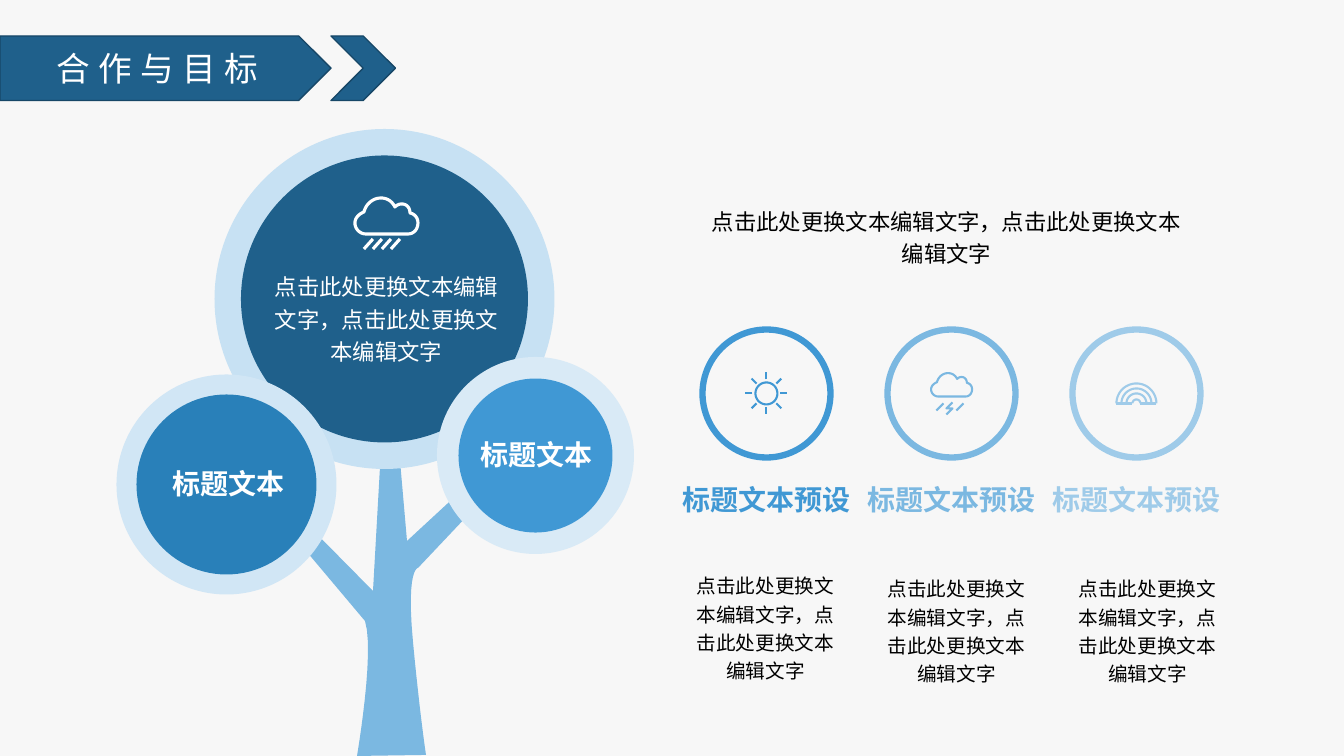
import math

from lxml import etree
from pptx import Presentation
from pptx import util as u
from pptx.dml.color import RGBColor
from pptx.enum import shapes, text
from pptx.oxml import ns

PX = 914400 / 100.8
FONT = "Noto Sans CJK SC"

WHITE = RGBColor(0xFF, 0xFF, 0xFF)
BLACK = RGBColor(0x00, 0x00, 0x00)
BACKGROUND = RGBColor(0xF7, 0xF7, 0xF7)
NAVY = RGBColor(0x1F, 0x60, 0x8B)
NAVY_EDGE = RGBColor(0x17, 0x47, 0x67)
BLUE = RGBColor(0x29, 0x80, 0xB9)
BRIGHT = RGBColor(0x40, 0x98, 0xD4)
SKY = RGBColor(0x7B, 0xB8, 0xE1)
PALE = RGBColor(0x9F, 0xCB, 0xE9)
HALO_TOP = RGBColor(0xC7, 0xE1, 0xF3)
HALO_RIGHT = RGBColor(0xD9, 0xEA, 0xF6)
HALO_LEFT = RGBColor(0xD1, 0xE6, 0xF5)

BODY = "点击此处更换文本编辑文字，点击此处更换文本编辑文字"

# Outlines: a pair is a straight step, six numbers are a cubic curve.
TREE = [(357, 756), (357, 756, 375, 651, 365, 621), (285, 526), (298, 515),
        (373, 591), (381, 449), (399, 449), (407, 541), (473, 480), (486, 496),
        (418, 568), (418, 568, 406, 568, 413, 642), (420, 716, 426, 755, 426, 755)]
CLOUD = [(54, 37), (60, 37, 64, 32, 64, 26), (64, 21, 61, 17, 56, 16),
         (56, 10, 52, 7, 48, 7), (45, 7, 43, 8, 41, 10), (38, 4, 33, 1, 27, 1),
         (19, 1, 12, 7, 10, 15), (5, 17, 1, 21, 1, 26), (1, 32, 6, 37, 12, 37)]


def px(length):
    return u.Emu(round(length * PX))


def paint(shape, fill=None, line=None, width=1):
    shape.shadow.inherit = False
    if fill is None:
        shape.fill.background()
    else:
        shape.fill.solid()
        shape.fill.fore_color.rgb = fill
    if line is None:
        shape.line.fill.background()
    else:
        shape.line.color.rgb = line
        shape.line.width = u.Pt(width)


def format_text(shape, size, colour, bold=False, spacing=None):
    """Centre the text of a shape and style its runs."""
    frame = shape.text_frame
    frame.auto_size = text.MSO_AUTO_SIZE.NONE
    frame.vertical_anchor = text.MSO_ANCHOR.MIDDLE
    for paragraph in frame.paragraphs:
        paragraph.alignment = text.PP_ALIGN.CENTER
        if spacing:
            paragraph.line_spacing = spacing
        for run in paragraph.runs:
            run.font.size = u.Pt(size)
            run.font.bold = bold
            run.font.name = FONT
            run.font.color.rgb = colour
            east_asian = etree.SubElement(run._r.get_or_add_rPr(), ns.qn("a:ea"))
            east_asian.set("typeface", FONT)


def add_text(slide, content, box, size, colour, bold=False, spacing=None, wrap=True):
    shape = slide.shapes.add_textbox(*map(px, box))
    frame = shape.text_frame
    frame.word_wrap = wrap
    frame.margin_left = frame.margin_right = 0
    frame.margin_top = frame.margin_bottom = 0
    frame.text = content
    format_text(shape, size, colour, bold, spacing)


def add_preset(slide, kind, box, **style):
    shape = slide.shapes.add_shape(kind, *map(px, box))
    paint(shape, **style)


def add_circle(slide, x, y, radius, **style):
    box = (x - radius, y - radius, 2 * radius, 2 * radius)
    add_preset(slide, shapes.MSO_SHAPE.OVAL, box, **style)


def trace(steps, pieces=12):
    """Turn straight steps and cubic curves into a closed list of points."""
    points = [steps[0]]
    for step in steps[1:]:
        if len(step) == 2:
            points.append(step)
            continue
        corners = [points[-1], step[:2], step[2:4], step[4:]]
        for piece in range(1, pieces + 1):
            t = piece / pieces
            weights = [math.comb(3, k) * t ** k * (1 - t) ** (3 - k) for k in range(4)]
            points.append(tuple(sum(w * corner[axis] for w, corner in zip(weights, corners))
                                for axis in (0, 1)))
    return points + [steps[0]]


def arc(x, y, radius, start, end, pieces=36):
    """Points on a circle between two angles in degrees, clockwise from the right."""
    angles = [math.radians(start + (end - start) * k / pieces) for k in range(pieces + 1)]
    return [(x + radius * math.cos(a), y + radius * math.sin(a)) for a in angles]


def add_outline(slide, contours, **style):
    """Draw one shape from several lists of points."""
    contours = [[(px(x), px(y)) for x, y in points] for points in contours]
    builder = slide.shapes.build_freeform(*contours[0][0], scale=1.0)
    for index, points in enumerate(contours):
        if index:
            builder.move_to(*points[0])
        builder.add_line_segments(points[1:], close=points[0] == points[-1])
    paint(builder.convert_to_shape(), **style)


def cloud(x, y, scale):
    return [(x + scale * a, y + scale * b) for a, b in trace(CLOUD)]


def add_rain_icon(slide):
    drops = [[(x, 249), (x + 9, 239)] for x in range(364, 392, 9)]
    add_outline(slide, [cloud(354, 197, 1)] + drops, line=WHITE, width=2.25)


def add_sun_icon(slide, x, y, colour):
    rays = [[(x + r * math.cos(angle), y + r * math.sin(angle)) for r in (14, 21)]
            for angle in (k * math.pi / 4 for k in range(8))]
    add_outline(slide, [arc(x, y, 11, 0, 360)] + rays, line=colour, width=1.5)


def add_storm_icon(slide, x, y, colour):
    drops = [[(left, y + 17), (left + 7, y + 10)] for left in (x - 15, x + 5)]
    bolt = [(x + 1, y + 9), (x - 5, y + 15), (x + 1, y + 15), (x - 5, y + 21)]
    add_outline(slide, [cloud(x - 21, y - 21, 0.65), bolt] + drops, line=colour, width=1.5)


def add_rainbow_icon(slide, x, y, colour):
    base = y + 10
    bands = [arc(x, base, radius, 180, 360) for radius in (20, 15, 10, 4)]
    feet = [[(x + side * 20, base), (x + side * 4, base)] for side in (-1, 1)]
    add_outline(slide, bands + feet, line=colour, width=1.5)


def add_title(slide):
    style = {"fill": NAVY, "line": NAVY_EDGE}
    add_preset(slide, shapes.MSO_SHAPE.PENTAGON, (0, 36, 331, 64.5), **style)
    add_preset(slide, shapes.MSO_SHAPE.CHEVRON, (331, 36, 64.5, 64.5), **style)
    title = slide.shapes.title
    title.left, title.top, title.width, title.height = map(px, (0, 36, 315, 64))
    title.text_frame.text = "合作与目标"
    format_text(title, 24, WHITE)
    for run in title.text_frame.paragraphs[0].runs:
        run._r.get_or_add_rPr().set("spc", "600")
    slide.shapes._spTree.append(title._element)


def add_tree(slide):
    add_outline(slide, [trace(TREE)], fill=SKY)
    for x, y, outer, halo, inner, fill in ((384.5, 299, 170, HALO_TOP, 143.5, NAVY),
                                           (535.5, 455.5, 98.5, HALO_RIGHT, 77, BRIGHT),
                                           (226.5, 484.5, 110, HALO_LEFT, 90, BLUE)):
        add_circle(slide, x, y, outer, fill=halo)
        add_circle(slide, x, y, inner, fill=fill)
    for x, y in ((229, 483), (537, 454)):
        add_text(slide, "标题文本", (x - 80, y - 20, 160, 40), 20, WHITE, bold=True)
    add_text(slide, BODY, (271, 237, 231, 159), 16, WHITE, spacing=1.2)
    add_rain_icon(slide)


def add_columns(slide):
    add_text(slide, BODY, (706, 202, 481, 66), 16, BLACK, spacing=1.2)
    columns = ((BRIGHT, add_sun_icon, 568), (SKY, add_storm_icon, 571),
               (PALE, add_rainbow_icon, 571))
    for index, (colour, add_icon, body_top) in enumerate(columns):
        x = 766.5 + 185 * index
        add_circle(slide, x, 393.5, 64, line=colour, width=4.5)
        add_icon(slide, x, 393.5, colour)
        add_text(slide, "标题文本预设", (x - 79, 479, 158, 40), 20, colour, bold=True, wrap=False)
        add_text(slide, BODY, (695 + 191 * index, body_top, 141, 116), 14, BLACK, spacing=1.2)


def main():
    presentation = Presentation()
    presentation.slide_width, presentation.slide_height = px(1344), px(756)
    slide = presentation.slides.add_slide(presentation.slide_layouts[5])
    slide.background.fill.solid()
    slide.background.fill.fore_color.rgb = BACKGROUND
    add_title(slide)
    add_tree(slide)
    add_columns(slide)
    presentation.save("out.pptx")


if __name__ == "__main__":
    main()
